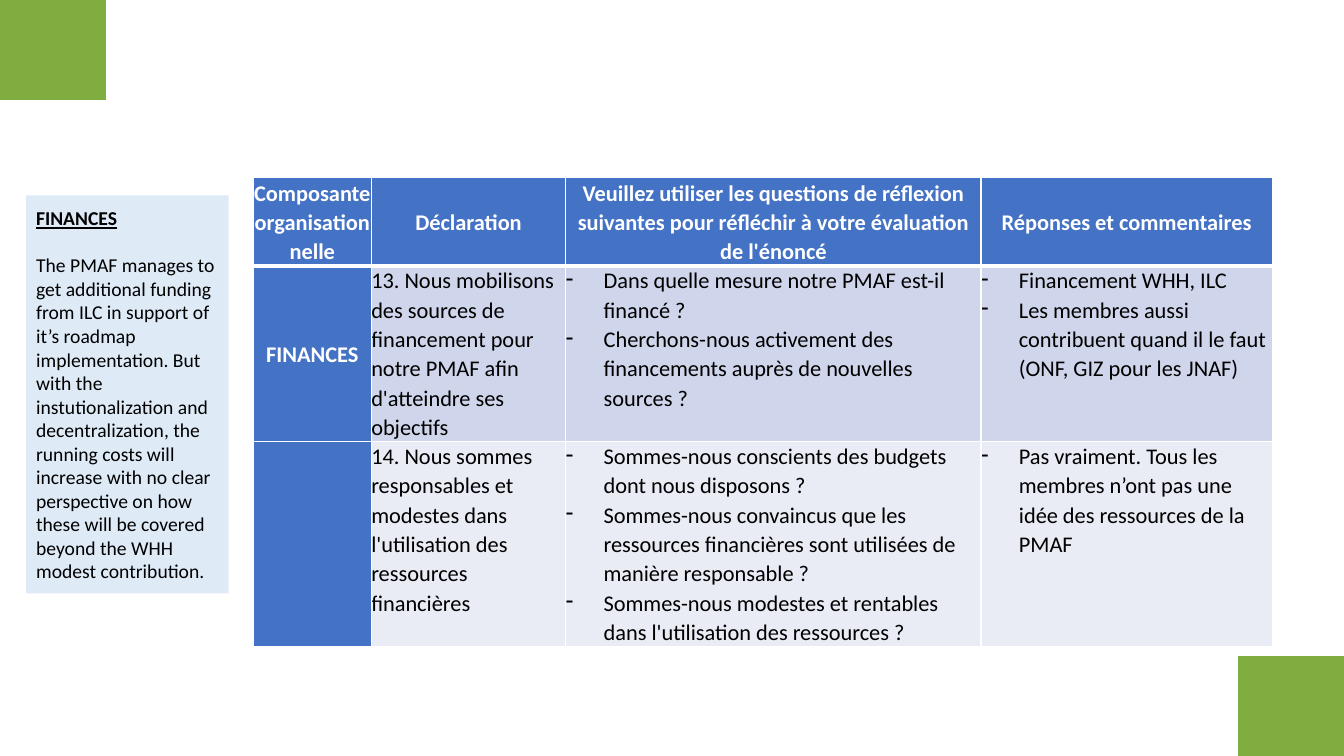
from lxml import etree
from pptx import Presentation
from pptx import util as u
from pptx.dml.color import RGBColor
from pptx.enum import shapes, text
from pptx.oxml.ns import qn

COLORS = {
    "green": "80AD40", "blue": "4472C4", "pale": "DEEBF7",
    "band_dark": "CFD5EA", "band_light": "E9EBF5",
    "white": "FFFFFF", "black": "000000",
}
WIDTH, HEIGHT = 960, 540
COLUMNS = [84.24, 138.96, 296.64, 208.08]
ROWS = [62, 125.4, 146]

HEADERS = [
    "Composante organisationnelle",
    "Déclaration",
    "Veuillez utiliser les questions de réflexion suivantes pour réfléchir à votre évaluation de l'énoncé",
    "Réponses et commentaires",
]
# Component, statement, reflection questions, answers
BODY = [
    ("FINANCES",
     "13. Nous mobilisons des sources de financement pour notre PMAF afin d'atteindre ses objectifs",
     ["Dans quelle mesure notre PMAF est-il financé ?",
      "Cherchons-nous activement des financements auprès de nouvelles sources ?"],
     ["Financement WHH, ILC",
      "Les membres aussi contribuent quand il le faut (ONF, GIZ pour les JNAF)"]),
    ("",
     "14. Nous sommes responsables et modestes dans l'utilisation des ressources financières",
     ["Sommes-nous conscients des budgets dont nous disposons ?",
      "Sommes-nous convaincus que les ressources financières sont utilisées de manière responsable ?",
      "Sommes-nous modestes et rentables dans l'utilisation des ressources ?"],
     ["Pas vraiment. Tous les membres n’ont pas une idée des ressources de la PMAF"]),
]
SUMMARY = (
    "The PMAF manages to get additional funding from ILC in support of it’s roadmap "
    "implementation. But with the instutionalization and decentralization, the running "
    "costs will increase with no clear perspective on how these will be covered beyond "
    "the WHH modest contribution."
)


class SlideBuilder:
    """Holds the slide and its text style."""

    def __init__(self, slide, font="Calibri"):
        self.slide = slide
        self.font = font

    def color(self, name):
        return RGBColor.from_string(COLORS[name])

    def fill(self, target, name):
        target.fill.solid()
        target.fill.fore_color.rgb = self.color(name)

    def rectangle(self, left, top, width, height, color):
        box = self.slide.shapes.add_shape(
            shapes.MSO_SHAPE.RECTANGLE, u.Pt(left), u.Pt(top), u.Pt(width), u.Pt(height))
        box.shadow.inherit = False
        self.fill(box, color)
        box.line.fill.background()
        return box

    def span(self, para, words, size, color="black", bold=False, underline=False):
        span = para.add_run()
        span.text = words
        font = span.font
        font.name, font.size = self.font, u.Pt(size)
        font.bold, font.underline = bold, underline
        font.color.rgb = self.color(color)

    def note(self, box, heading, words):
        frame = box.text_frame
        frame.word_wrap = True
        frame.vertical_anchor = text.MSO_ANCHOR.MIDDLE
        title, body = frame.paragraphs[0], frame.add_paragraph()
        title.alignment = body.alignment = text.PP_ALIGN.LEFT
        body.space_before = u.Pt(17)
        self.span(title, heading, 14, bold=True, underline=True)
        self.span(body, words, 14)

    def bullet(self, para):
        props = para._p.get_or_add_pPr()
        props.set("marL", str(u.Pt(27)))
        props.set("indent", str(-u.Pt(27)))
        etree.SubElement(props, qn("a:buChar")).set("char", "-")

    def borders(self, cell, bottom):
        props = cell._tc.get_or_add_tcPr()
        for side, width in (("L", 1), ("R", 1), ("T", 1), ("B", bottom)):
            line = etree.SubElement(props, qn("a:ln" + side), w=str(u.Pt(width)))
            solid = etree.SubElement(line, qn("a:solidFill"))
            etree.SubElement(solid, qn("a:srgbClr"), val=COLORS["white"])

    def cell(self, cell, content, color, label=False, bottom=1):
        self.borders(cell, bottom)
        self.fill(cell, color)
        cell.margin_left = cell.margin_right = cell.margin_top = cell.margin_bottom = 0
        cell.vertical_anchor = text.MSO_ANCHOR.MIDDLE if label else text.MSO_ANCHOR.TOP
        bulleted = isinstance(content, list)
        frame = cell.text_frame
        for index, words in enumerate(content if bulleted else [content]):
            para = frame.add_paragraph() if index else frame.paragraphs[0]
            para.line_spacing = 1.07
            para.alignment = text.PP_ALIGN.CENTER if label else text.PP_ALIGN.LEFT
            if bulleted:
                self.bullet(para)
            if words:
                self.span(para, words, 16, "white" if label else "black", bold=label)

    def table(self, left, top, columns, rows):
        frame = self.slide.shapes.add_table(
            len(rows), len(columns), u.Pt(left), u.Pt(top), u.Pt(sum(columns)), u.Pt(sum(rows)))
        for column, width in zip(frame.table.columns, columns):
            column.width = u.Pt(width)
        for row, height in zip(frame.table.rows, rows):
            row.height = u.Pt(height)
        return frame.table


def main():
    deck = Presentation()
    deck.slide_width, deck.slide_height = u.Pt(WIDTH), u.Pt(HEIGHT)
    page = SlideBuilder(deck.slides.add_slide(deck.slide_layouts[6]))

    # Green corners
    corner_width, corner_height = 75.6, 71.3
    page.rectangle(0, 0, corner_width, corner_height, "green")
    page.rectangle(WIDTH - corner_width, HEIGHT - corner_height,
                   corner_width, corner_height, "green")

    # Assessment table
    table = page.table(181, 127, COLUMNS, ROWS)
    for column, words in enumerate(HEADERS):
        page.cell(table.cell(0, column), words, "blue", label=True, bottom=3)
    for row, contents in enumerate(BODY, start=1):
        band = "band_dark" if row % 2 else "band_light"
        for column, content in enumerate(contents):
            label = column == 0
            page.cell(table.cell(row, column), content, "blue" if label else band, label)

    # Summary panel
    panel = page.rectangle(18.7, 139.5, 144.7, 284.4, "pale")
    page.note(panel, "FINANCES", SUMMARY)

    deck.save("out.pptx")


if __name__ == "__main__":
    main()
